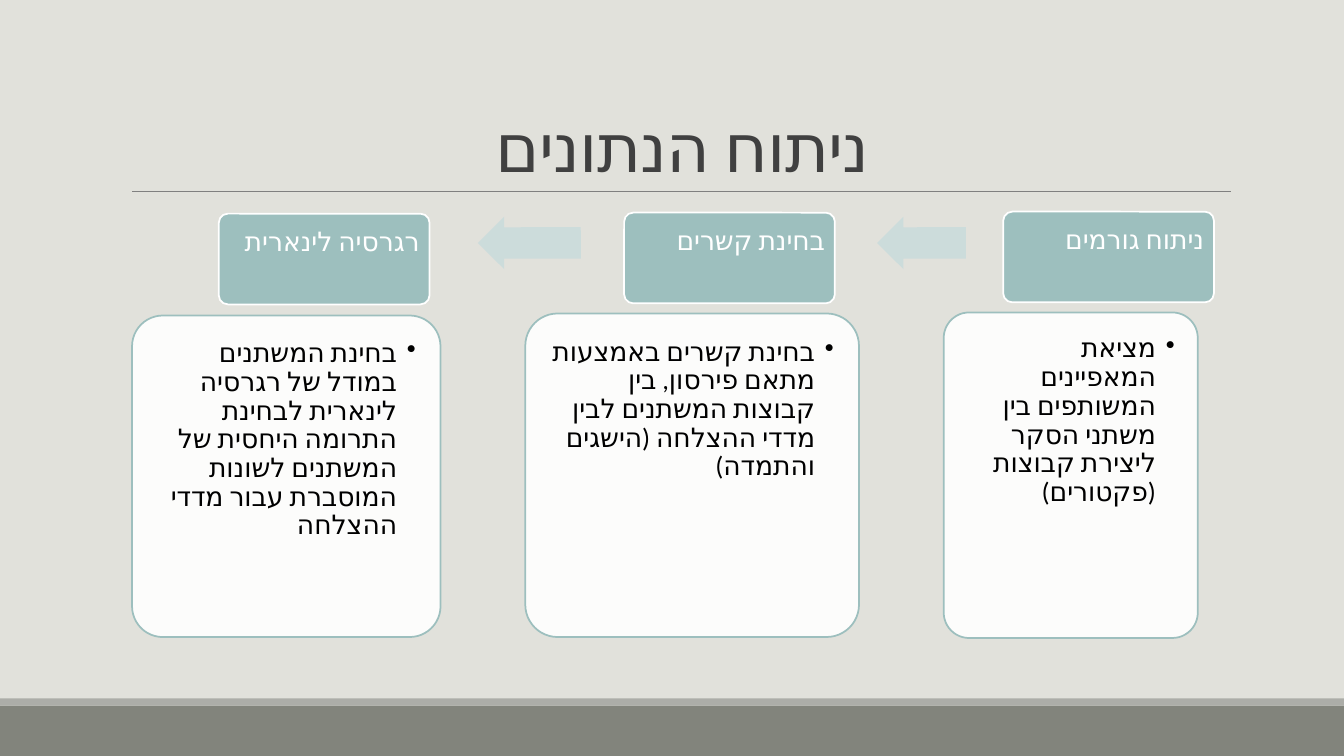
from lxml import etree
from pptx import Presentation
from pptx.dml.color import RGBColor
from pptx.enum.shapes import MSO_CONNECTOR as Connector, MSO_SHAPE as Shape
from pptx.enum.text import MSO_ANCHOR as Anchor, PP_ALIGN as Align
from pptx.oxml.ns import qn
from pptx.util import Inches, Pt

TITLE = "ניתוח הנתונים "
# Steps from right to left; header is (left, top), card is (left, top, width, height)
STEPS = [
    {"name": "ניתוח גורמים",
     "detail": "מציאת המאפיינים המשותפים בין משתני הסקר ליצירת קבוצות (פקטורים)",
     "header": (9.95, 2.1), "card": (9.36, 3.1, 2.52, 3.23)},
    {"name": "בחינת קשרים",
     "detail": "בחינת קשרים באמצעות מתאם פירסון, בין קבוצות המשתנים לבין מדדי ההצלחה (הישגים והתמדה)",
     "header": (6.19, 2.11), "card": (5.21, 3.11, 3.31, 3.21)},
    {"name": "רגרסיה לינארית",
     "detail": "בחינת המשתנים במודל של רגרסיה לינארית לבחינת התרומה היחסית של המשתנים לשונות המוסברת עבור מדדי ההצלחה",
     "header": (2.17, 2.12), "card": (1.31, 3.13, 3.06, 3.19)},
]
ARROWS = [(8.7, 0.88), (4.74, 1.02)]  # left, width
ARROW_TOP, ARROW_HEIGHT = 2.15, 0.52
HEADER_SIZE = (2.09, 0.9)
HEADER_INSETS = (0.15, 0.12, 0.07, 0.08)
CARD_INSETS = (0.15,) * 4
BULLET_INDENT = 0.19
FONT = "Calibri"
COLORS = {
    "background": "E1E1DB", "footer": "82847C", "footer edge": "ACADA8",
    "rule": "808080", "title": "404040", "teal": "9DBFBE",
    "arrow": "CCDCDB", "white": "FFFFFF", "black": "000000",
}


def color(name):
    return RGBColor.from_string(COLORS[name])


def add_block(page, kind, place, fill, line=None):
    block = page.shapes.add_shape(kind, *map(Inches, place))
    block.shadow.inherit = False
    block.fill.solid()
    block.fill.fore_color.rgb = color(fill)
    if line:
        block.line.color.rgb = color(line)
        block.line.width = Pt(1.25)
    else:
        block.line.fill.background()
    return block


def write(box, text, size, ink, align, spacing, anchor, insets):
    """Put one right-to-left paragraph in the box and return it with its run."""
    frame = box.text_frame
    frame.word_wrap = True
    frame.vertical_anchor = anchor
    (frame.margin_left, frame.margin_top,
     frame.margin_right, frame.margin_bottom) = map(Inches, insets)
    para = frame.paragraphs[0]
    para.alignment = align
    para.line_spacing = spacing
    para._p.get_or_add_pPr().set("rtl", "1")
    span = para.add_run()
    span.text = text
    span.font.size = Pt(size)
    span.font.name = FONT
    span.font.color.rgb = color(ink)
    properties = span._r.get_or_add_rPr()
    properties.set("lang", "he-IL")
    etree.SubElement(properties, qn("a:cs")).set("typeface", FONT)
    return para, span


def add_bullet(para):
    properties = para._p.get_or_add_pPr()
    properties.set("marL", str(Inches(BULLET_INDENT)))
    properties.set("indent", str(-Inches(BULLET_INDENT)))
    etree.SubElement(properties, qn("a:buChar")).set("char", "•")


def add_rounded(page, place, fill, line, text, ink, insets):
    block = add_block(page, Shape.ROUNDED_RECTANGLE, place, fill, line)
    block.adjustments[0] = 0.1
    para, _ = write(block, text, 19, ink, Align.RIGHT, 0.9, Anchor.TOP, insets)
    return block, para


def add_step(page, step):
    add_rounded(page, step["header"] + HEADER_SIZE, "teal", "white",
                step["name"], "white", HEADER_INSETS)
    card, para = add_rounded(page, step["card"], "white", "teal",
                             step["detail"], "black", CARD_INSETS)
    add_bullet(para)
    fill = card._element.spPr.find(qn("a:solidFill"))
    etree.SubElement(fill[0], qn("a:alpha")).set("val", "90000")


def add_frame(page):
    page.background.fill.solid()
    page.background.fill.fore_color.rgb = color("background")
    add_block(page, Shape.RECTANGLE, (0, 7, 13.33, 0.5), "footer")
    add_block(page, Shape.RECTANGLE, (0, 6.93, 13.33, 0.07), "footer edge")
    rule = page.shapes.add_connector(
        Connector.STRAIGHT, *map(Inches, (1.31, 1.9, 12.21, 1.9)))
    rule.line.color.rgb = color("rule")
    rule.line.width = Pt(0.5)
    etree.SubElement(rule._element.spPr, qn("a:effectLst"))
    title = page.shapes.add_textbox(*map(Inches, (1.2, 0.31, 11, 1.59)))
    _, span = write(title, TITLE, 48, "title", Align.CENTER, 0.85,
                    Anchor.BOTTOM, (0.1, 0.05, 0.1, 0.05))
    span._r.get_or_add_rPr().set("spc", "-50")


def main():
    deck = Presentation()
    deck.slide_width, deck.slide_height = Inches(13.33), Inches(7.5)
    page = deck.slides.add_slide(deck.slide_layouts[6])
    add_frame(page)
    for step in STEPS:
        add_step(page, step)
    for left, width in ARROWS:
        arrow = add_block(page, Shape.RIGHT_ARROW,
                          (left, ARROW_TOP, width, ARROW_HEIGHT), "arrow")
        arrow.adjustments[0] = 0.6
        arrow.rotation = 179.9
    deck.save("out.pptx")


if __name__ == "__main__":
    main()
